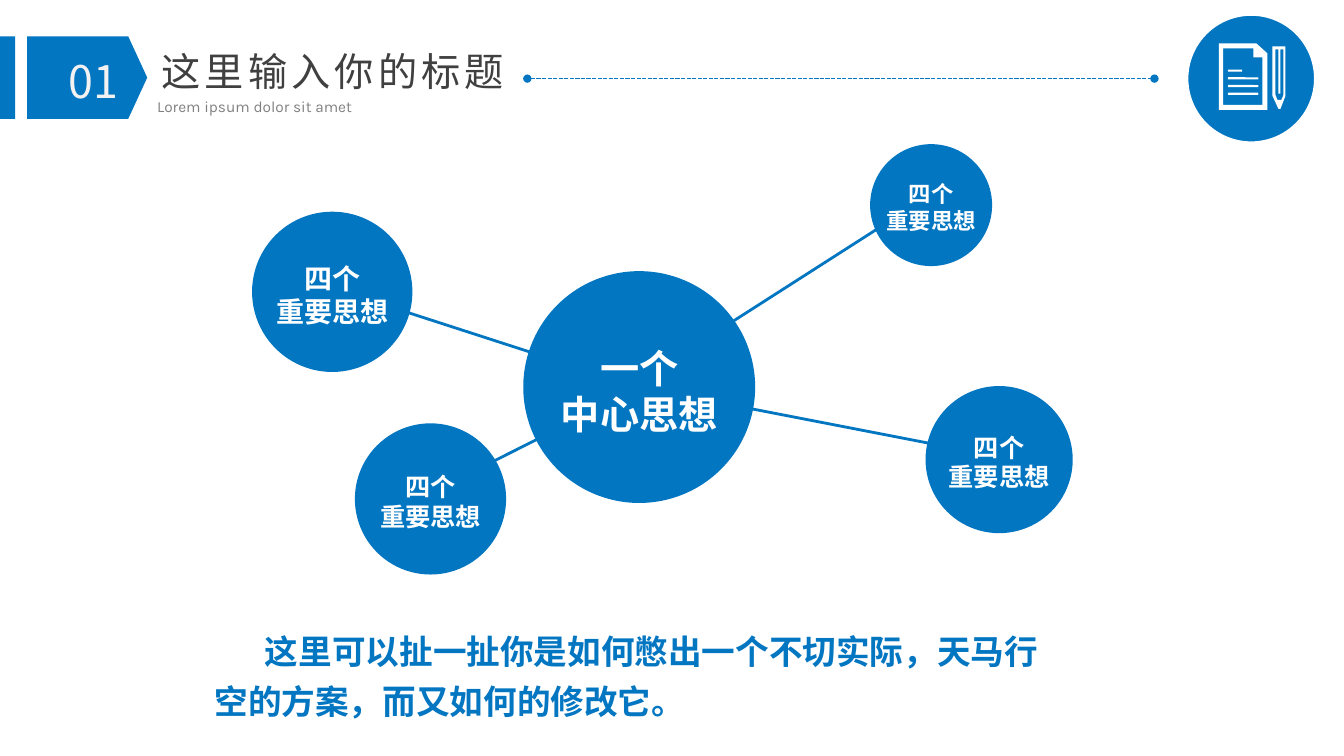
from pptx import Presentation
from pptx import util as u
from pptx.dml.color import RGBColor
from pptx.enum import dml, lang, shapes, text
from pptx.oxml import parse_xml
from pptx.oxml.ns import nsdecls

# The slide is a grid of 1333 columns by 750 rows; every length counts cells.
COLUMNS, ROWS = 1333, 750
CELL = u.Inches(0.01)

COLORS = {"blue": "0376C2", "white": "FFFFFF", "number": "F2F2F2",
          "title": "404040", "subtitle": "808080"}
CJK, LATIN = "Noto Sans CJK SC", "Karla"
LINE_HEIGHT = 1.19  # share of the font size

NUMBER = "01"
TITLE = "这里输入你的标题"
SUBTITLE = "Lorem ipsum dolor sit amet"
SUMMARY = "这里可以扯一扯你是如何憋出一个不切实际，天马行空的方案，而又如何的修改它。"

IDEA = ["四个", "重要思想"]
# lines, left, top, diameter, font size
CIRCLES = [
    (["一个", "中心思想"], 519, 269, 230, 28),
    (IDEA, 863, 143, 121, 16),
    (IDEA, 250, 210, 159, 20),
    (IDEA, 918, 383, 146, 18),
    (IDEA, 352, 420, 150, 18),
]
SPOKES = [(324, 284, 630, 383), (417, 494, 632, 386),
          (622, 386, 900, 208), (629, 383, 990, 453)]

BADGE = (1178, 15, 126, 126)
PAGE = [
    [(1209, 43), (1246, 43), (1257, 53), (1257, 109), (1209, 109)],
    [(1213, 104), (1213, 48), (1243, 48), (1243, 57), (1252, 57), (1252, 104)],
]
PENCIL = [
    [(1262, 46), (1275, 46), (1275, 95), (1270, 108), (1268, 108), (1262, 95)],
    [(1273, 94), (1271, 99), (1267, 99), (1265, 94), (1265, 49), (1268, 49),
     (1268, 93), (1270, 93), (1270, 49), (1273, 49)],
]
PAGE_LINE_WIDTHS = [14, 30, 30, 30]
PAGE_LINE_LEFT, PAGE_LINE_TOP, PAGE_LINE_STEP = 1218, 69, 7.67


def cells(*counts):
    return [round(count * CELL) for count in counts]


def color(name):
    return RGBColor.from_string(COLORS[name])


def write(shape, lines, size, font=CJK, fill="white", bold=False, spacing=None,
          align=text.PP_ALIGN.CENTER, anchor=text.MSO_ANCHOR.TOP, wrap=True,
          line_height=None, indent=None):
    """Fill a shape with one paragraph per line, all in the same format."""
    frame = shape.text_frame
    frame.word_wrap = wrap
    frame.auto_size = text.MSO_AUTO_SIZE.NONE
    frame.vertical_anchor = anchor
    for index, line in enumerate(lines):
        paragraph = frame.add_paragraph() if index else frame.paragraphs[0]
        paragraph.alignment = align
        if line_height:
            paragraph.line_spacing = u.Pt(round(size * line_height, 1))
        if indent:
            paragraph._p.get_or_add_pPr().set("indent", str(cells(indent)[0]))
        run = paragraph.add_run()
        run.text = line
        run.font.size = u.Pt(size)
        run.font.bold = bold
        run.font.color.rgb = color(fill)
        run.font.name = font
        run.font.language_id = lang.MSO_LANGUAGE_ID.SIMPLIFIED_CHINESE
        properties = run.font._element
        properties.find("{*}latin").addnext(
            parse_xml(f'<a:ea {nsdecls("a")} typeface="{font}"/>'))
        if spacing:
            properties.set("spc", str(spacing * 100))


def paint(shape, fill="blue", outline=None):
    shape.shadow.inherit = False
    shape.fill.solid()
    shape.fill.fore_color.rgb = color(fill)
    if outline:
        shape.line.color.rgb = color(outline)
        shape.line.width = u.Pt(1)
    else:
        shape.line.fill.background()
    return shape


def add_shape(slide, kind, box, **look):
    return paint(slide.shapes.add_shape(kind, *cells(*box)), **look)


def add_text(slide, box, lines, size, **look):
    write(slide.shapes.add_textbox(*cells(*box)), lines, size, **look)


def add_line(slide, ends, width):
    line = slide.shapes.add_connector(shapes.MSO_CONNECTOR.STRAIGHT, *cells(*ends))
    line.line.color.rgb = color("blue")
    line.line.width = u.Pt(width)
    line._element.spPr.append(parse_xml(f'<a:effectLst {nsdecls("a")}/>'))
    return line


def add_outline(slide, contours):
    """Draw a white outline whose later contours are holes in the first."""
    builder = slide.shapes.build_freeform(*contours[0][0], scale=CELL)
    for index, contour in enumerate(contours):
        if index:
            builder.move_to(*contour[0])
        builder.add_line_segments(contour[1:], close=True)
    paint(builder.convert_to_shape(), fill="white")


def add_header(slide):
    kinds = shapes.MSO_SHAPE
    add_shape(slide, kinds.RECTANGLE, (0, 36, 15, 82))
    tab = add_shape(slide, kinds.PENTAGON, (27, 36, 119, 82))
    tab.adjustments[0] = 0.23
    add_text(slide, (40, 49, 106, 64), [NUMBER], 32, fill="number",
             line_height=LINE_HEIGHT)

    title = slide.shapes.title
    title.left, title.top, title.width, title.height = cells(146, 42, 368, 57)
    write(title, [TITLE], 28, font=LATIN, fill="title", spacing=3, wrap=False,
          anchor=text.MSO_ANCHOR.MIDDLE)
    add_text(slide, (146, 91, 368, 29), [SUBTITLE], 11, font=LATIN,
             fill="subtitle", align=text.PP_ALIGN.JUSTIFY)

    rule = add_line(slide, (523, 78, 1145, 78), 1)
    rule.line.dash_style = dml.MSO_LINE.SQUARE_DOT
    for end in ("headEnd", "tailEnd"):
        rule.line._get_or_add_ln().append(
            parse_xml(f'<a:{end} {nsdecls("a")} type="oval"/>'))


def add_icon(slide):
    add_shape(slide, shapes.MSO_SHAPE.OVAL, BADGE, outline="white")
    for row, width in enumerate(PAGE_LINE_WIDTHS):
        top = PAGE_LINE_TOP + row * PAGE_LINE_STEP
        add_shape(slide, shapes.MSO_SHAPE.ROUNDED_RECTANGLE,
                  (PAGE_LINE_LEFT, top, width, 2), fill="white")
    add_outline(slide, PAGE)
    add_outline(slide, PENCIL)


def add_mind_map(slide):
    for ends in SPOKES:
        add_line(slide, ends, 2)
    for lines, left, top, diameter, size in CIRCLES:
        circle = add_shape(slide, shapes.MSO_SHAPE.OVAL,
                           (left, top, diameter, diameter))
        frame = circle.text_frame
        frame.margin_left = frame.margin_right = frame.margin_bottom = 0
        frame.margin_top = u.Pt(size * 0.2)
        write(circle, lines, size, bold=True, wrap=False,
              anchor=text.MSO_ANCHOR.MIDDLE, line_height=LINE_HEIGHT)


def main():
    presentation = Presentation()
    presentation.slide_width, presentation.slide_height = cells(COLUMNS, ROWS)
    slide = presentation.slides.add_slide(presentation.slide_layouts[5])
    add_header(slide)
    add_icon(slide)
    add_mind_map(slide)
    add_text(slide, (203, 611, 866, 111), [SUMMARY], 24, fill="blue", bold=True,
             align=text.PP_ALIGN.LEFT, line_height=LINE_HEIGHT * 1.25, indent=50)
    presentation.save("out.pptx")


if __name__ == "__main__":
    main()
